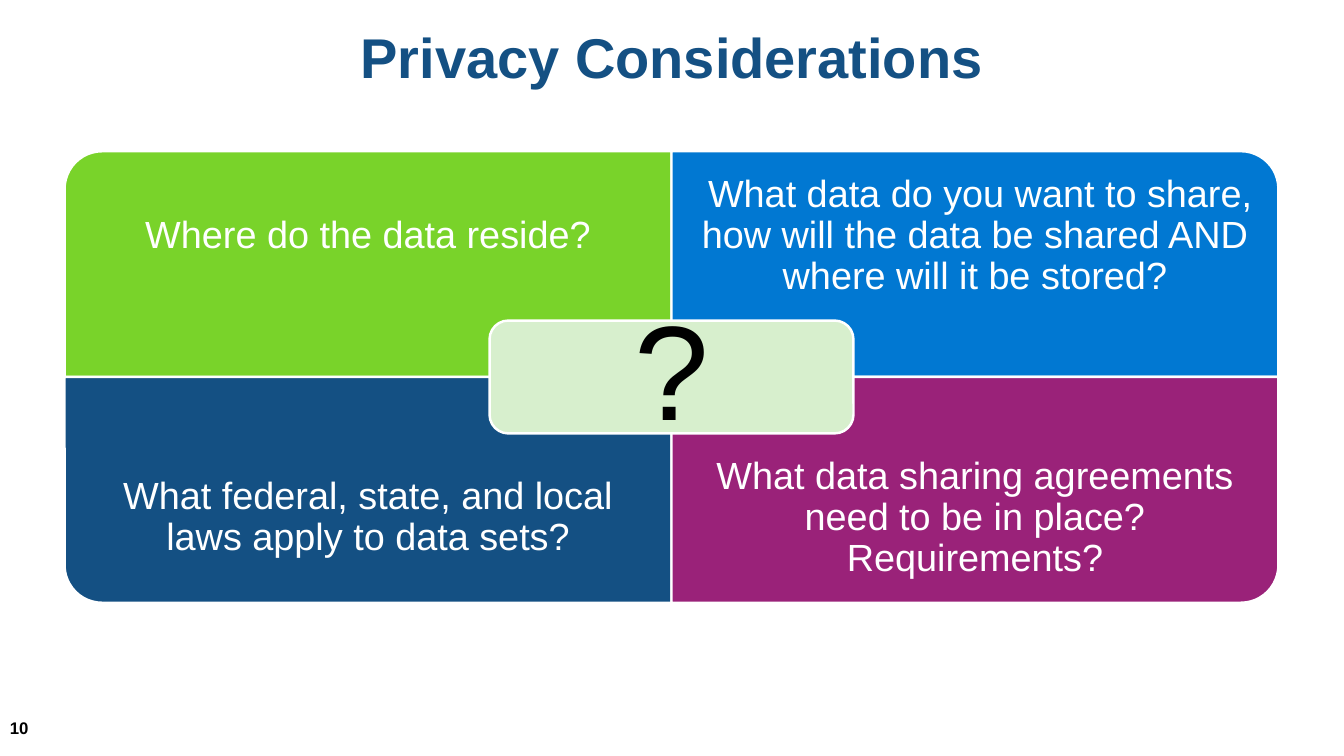
from pptx import Presentation
from pptx.dml.color import RGBColor
from pptx.enum.shapes import MSO_SHAPE as Shape
from pptx.enum.text import MSO_ANCHOR as Anchor, PP_ALIGN as Align
from pptx.util import Inches, Pt

PANEL_WIDTH, PANEL_HEIGHT = 6.02, 2.24
LEFT, TOP = 0.64, 1.5
LABEL_HEIGHT = PANEL_HEIGHT * 0.75
CENTER_X, CENTER_Y = LEFT + PANEL_WIDTH, TOP + PANEL_HEIGHT
HUB_WIDTH, HUB_HEIGHT = 3.61, 1.12

deck = Presentation()
deck.slide_width, deck.slide_height = Inches(13.33), Inches(7.5)
page = deck.slides.add_slide(deck.slide_layouts[6])


def add_panel(kind, center_x, center_y, width, height, color):
    """Add a white-edged shape placed by its centre."""
    panel = page.shapes.add_shape(
        kind, Inches(center_x - width / 2), Inches(center_y - height / 2),
        Inches(width), Inches(height))
    panel.shadow.inherit = False
    panel.fill.solid()
    panel.fill.fore_color.rgb = RGBColor.from_string(color)
    panel.line.color.rgb = RGBColor.from_string("FFFFFF")
    panel.line.width = Pt(1.75)
    return panel


def write(box, text, size, color, margin, anchor=Anchor.MIDDLE,
          align=Align.CENTER, spacing=0.9, bold=False):
    frame = box.text_frame
    frame.word_wrap = True
    frame.vertical_anchor = anchor
    frame.margin_left = frame.margin_right = Inches(margin)
    frame.margin_top = frame.margin_bottom = Inches(min(margin, 0.21) if margin > 0.1 else margin / 2)
    para = frame.paragraphs[0]
    para.text = text
    para.alignment = align
    para.line_spacing = spacing
    para.font.name = "Arial"
    para.font.size = Pt(size)
    para.font.bold = bold
    para.font.color.rgb = RGBColor.from_string(color)


title = page.shapes.add_textbox(Inches(LEFT), Inches(0.25), Inches(2 * PANEL_WIDTH), Inches(1))
write(title, "Privacy Considerations", 40, "145083", 0.1, anchor=Anchor.TOP, bold=True)

# column, row, rotation that turns the rounded corner outwards, colour, question
questions = [
    (0, 0, 270, "79D32A", "Where do the data reside?"),
    (1, 0, 0, "0178D2", " What data do you want to share, how will the data be shared AND "
                        "where will it be stored?"),
    (0, 1, 180, "145083", "What federal, state, and local laws apply to data sets?"),
    (1, 1, 90, "9A2279", "What data sharing agreements need to be in place? Requirements?"),
]
for column, row, rotation, color, question in questions:
    left = LEFT + column * PANEL_WIDTH
    top = TOP + row * PANEL_HEIGHT
    size = (PANEL_WIDTH, PANEL_HEIGHT) if rotation % 180 == 0 else (PANEL_HEIGHT, PANEL_WIDTH)
    panel = add_panel(Shape.ROUND_1_RECTANGLE, left + PANEL_WIDTH / 2,
                      top + PANEL_HEIGHT / 2, *size, color)
    panel.rotation = rotation
    # Labels keep clear of the hub: upper ones sit high, lower ones sit low
    label_top = top + row * (PANEL_HEIGHT - LABEL_HEIGHT)
    label = page.shapes.add_textbox(Inches(left), Inches(label_top),
                                    Inches(PANEL_WIDTH), Inches(LABEL_HEIGHT))
    write(label, question, 27, "FFFFFF", 0.21)

hub = add_panel(Shape.ROUNDED_RECTANGLE, CENTER_X, CENTER_Y, HUB_WIDTH, HUB_HEIGHT, "D7EFCD")
write(hub, "?", 96, "000000", 0)

number = page.shapes.add_textbox(Inches(0), Inches(7.02), Inches(3), Inches(0.4))
write(number, "10", 12, "000000", 0.1, align=Align.LEFT, spacing=1.0, bold=True)

deck.save("out.pptx")
